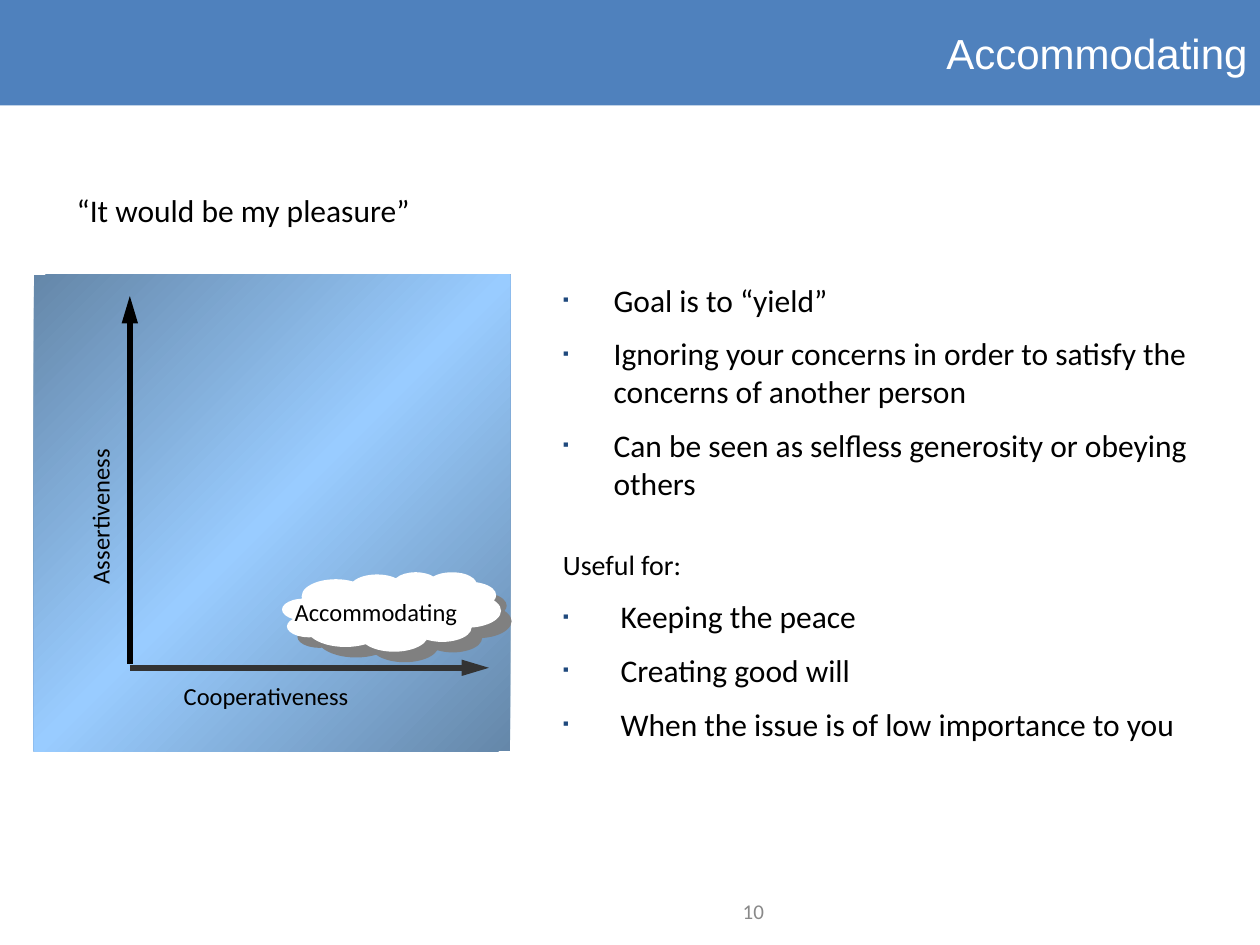
from copy import deepcopy
from dataclasses import dataclass

from lxml.etree import SubElement
from pptx import Presentation
from pptx.dml.color import RGBColor
from pptx.enum.shapes import MSO_CONNECTOR, MSO_SHAPE
from pptx.enum.text import MSO_ANCHOR as Anchor, PP_ALIGN as Align
from pptx.oxml.ns import qn
from pptx.util import Pt

PARAGRAPH_GAP = 9


@dataclass
class Line:
    text: str
    size: float = 18
    color: str = "000000"
    font: str = "Calibri"
    align: Align = Align.LEFT
    bullet_indent: float = 0


@dataclass
class TextBlock:
    box: tuple[float, float, float, float]
    lines: list[Line]
    inset: bool = True
    wrap: bool = True
    rotation: float = 0
    anchor: Anchor = Anchor.TOP


@dataclass
class Axis:
    start: tuple[float, float]
    end: tuple[float, float]
    color: str


def rgb(value: str) -> RGBColor:
    return RGBColor.from_string(value)


def add_bullet(paragraph, indent: float) -> None:
    properties = paragraph._p.get_or_add_pPr()
    properties.set("marL", str(Pt(indent)))
    properties.set("indent", str(-Pt(indent)))
    color = SubElement(properties, qn("a:buClr"))
    SubElement(color, qn("a:srgbClr"), val="1F497D")
    SubElement(properties, qn("a:buSzPct"), val="55000")
    SubElement(properties, qn("a:buFont"), typeface="Arial")
    SubElement(properties, qn("a:buChar"), char="▪")


def write_lines(text_frame, lines: list[Line]) -> None:
    for index, line in enumerate(lines):
        paragraph = text_frame.add_paragraph() if index else text_frame.paragraphs[0]
        paragraph.text = line.text
        paragraph.alignment = line.align
        paragraph.space_before = Pt(PARAGRAPH_GAP if index else 0)
        if line.bullet_indent:
            add_bullet(paragraph, line.bullet_indent)
        font = paragraph.runs[0].font
        font.name, font.size = line.font, Pt(line.size)
        font.color.rgb = rgb(line.color)


def add_text(slide, block: TextBlock) -> None:
    shape = slide.shapes.add_textbox(*map(Pt, block.box))
    shape.rotation = block.rotation
    text_frame = shape.text_frame
    text_frame.word_wrap = block.wrap
    text_frame.vertical_anchor = block.anchor
    if not block.inset:
        text_frame.margin_left = text_frame.margin_right = 0
        text_frame.margin_top = text_frame.margin_bottom = 0
    write_lines(text_frame, block.lines)


def add_plain_shape(slide, kind: MSO_SHAPE, box: tuple, color: str):
    shape = slide.shapes.add_shape(kind, *map(Pt, box))
    shape.fill.solid()
    shape.fill.fore_color.rgb = rgb(color)
    shape.line.fill.background()
    shape.shadow.inherit = False
    return shape


def add_gradient(shape, edge: str, middle: str) -> None:
    shape.fill.gradient()
    shape.fill.gradient_angle = 315
    stop_list = next(shape._element.iter(qn("a:gsLst")))
    stop_list.insert(1, deepcopy(stop_list[0]))
    stops = zip(shape.fill.gradient_stops, (edge, middle, edge), (0, 0.5, 1))
    for stop, color, position in stops:
        stop.color.rgb = rgb(color)
        stop.position = position


def add_drop_shadow(shape, color: str, distance: float) -> None:
    effects = next(shape._element.iter(qn("a:effectLst")))
    shadow = SubElement(effects, qn("a:outerShdw"), blurRad="0",
                        dist=str(Pt(distance)), dir="2700000",
                        algn="ctr", rotWithShape="0")
    SubElement(shadow, qn("a:srgbClr"), val=color)


def add_axis(slide, axis: Axis) -> None:
    connector = slide.shapes.add_connector(
        MSO_CONNECTOR.STRAIGHT, *map(Pt, axis.start + axis.end))
    connector.line.width = Pt(3.13)
    connector.line.color.rgb = rgb(axis.color)
    line = connector.line._get_or_add_ln()
    SubElement(line, qn("a:tailEnd"), type="triangle", w="med", len="lg")
    SubElement(connector._element.spPr, qn("a:effectLst"))


def bullets(indent: float, *texts: str) -> list[Line]:
    return [Line(text, bullet_indent=indent) for text in texts]


AXES = [
    Axis((74.2, 381.6), (279.4, 381.6), "333333"),
    Axis((74.2, 379.4), (74.2, 169.2), "000000"),
]

TEXT_BLOCKS = [
    TextBlock((105, 389, 112.3, 16.6), [Line("Cooperativeness", 14)],
              inset=False, wrap=False),
    TextBlock((-3.6, 265, 121, 16.6), [Line("Assertiveness", 14)],
              inset=False, rotation=270),
    TextBlock((314.6, 157, 405.4, 136.8), bullets(
        29,
        "Goal is to “yield”",
        "Ignoring your concerns in order to satisfy the concerns of another person",
        "Can be seen as selfless generosity or obeying others")),
    TextBlock((314.6, 309.6, 405.4, 123.8), [Line("Useful for:", 16)] + bullets(
        33,
        "Keeping the peace",
        "Creating good will",
        "When the issue is of low importance to you")),
    TextBlock((36.7, 105.8, 368.6, 28.8), [Line("“It would be my pleasure”")]),
    TextBlock((161.3, 337.7, 130.3, 23.8), [Line("Accommodating", 14)]),
    TextBlock((275.8, 506.2, 167.8, 28.8),
              [Line("10", 12, "898989", align=Align.RIGHT)], anchor=Anchor.MIDDLE),
]


def main() -> None:
    presentation = Presentation()
    presentation.slide_width, presentation.slide_height = Pt(720), Pt(540)
    slide = presentation.slides.add_slide(presentation.slide_layouts[6])

    panel = add_plain_shape(slide, MSO_SHAPE.RECTANGLE,
                            (19.4, 157, 272.2, 272.2), "99CCFF")
    add_gradient(panel, "6587A9", "99CCFF")

    banner = add_plain_shape(slide, MSO_SHAPE.RECTANGLE, (0, 0, 720, 60.2), "4F81BD")
    banner.text_frame.vertical_anchor = Anchor.MIDDLE
    write_lines(banner.text_frame, [
        Line("Accommodating", 24, "FFFFFF", "Arial", Align.RIGHT)])

    for axis in AXES:
        add_axis(slide, axis)

    cloud = add_plain_shape(slide, MSO_SHAPE.CLOUD, (161.3, 326.9, 125, 45.4), "FFFFFF")
    add_drop_shadow(cloud, "808080", 8.5)

    for block in TEXT_BLOCKS:
        add_text(slide, block)

    presentation.save("out.pptx")


if __name__ == "__main__":
    main()
